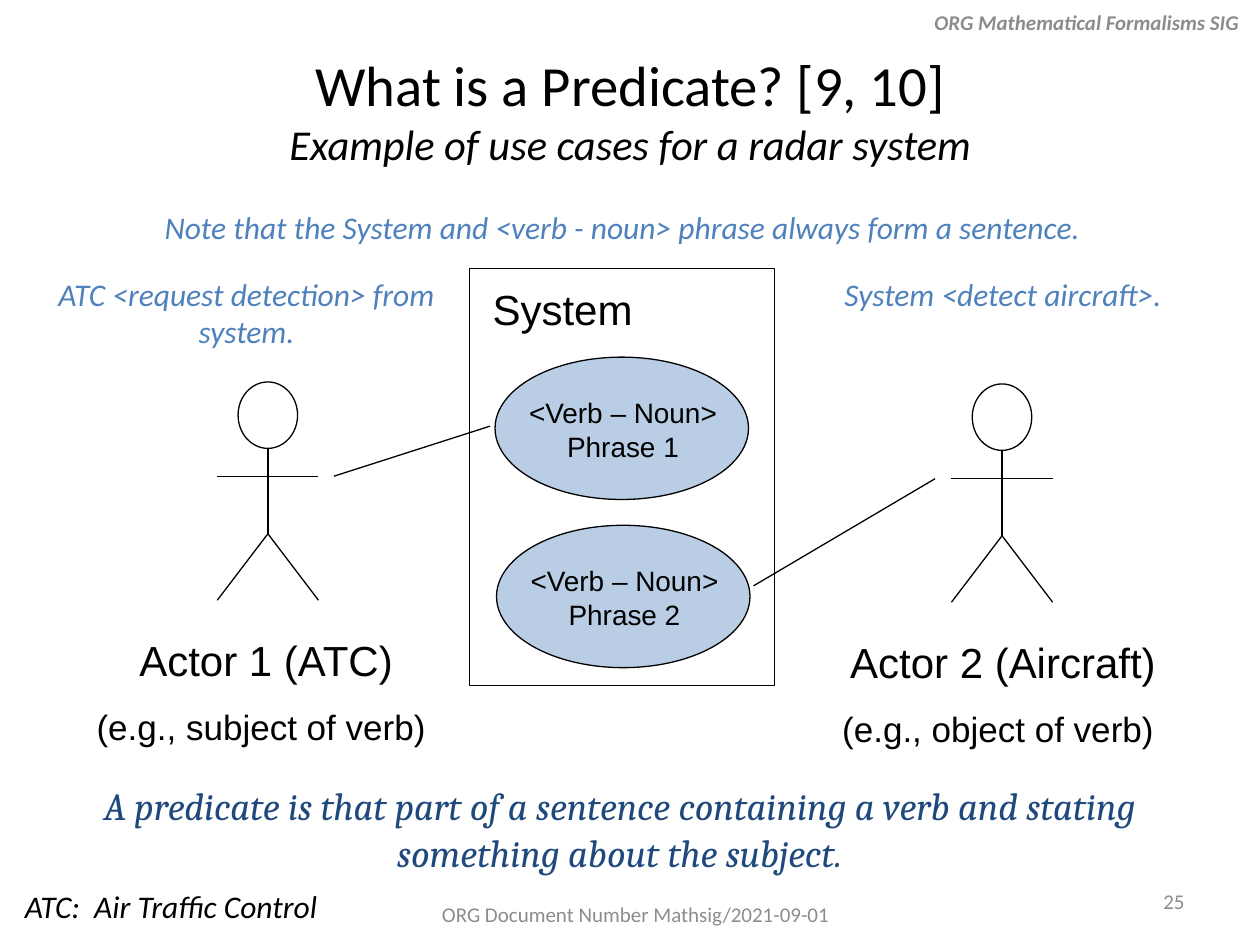
import pptx
import pptx.util
import pptx.dml.color
import pptx.enum.shapes
import pptx.enum.text
import pptx.oxml

Cm, Pt = pptx.util.Cm, pptx.util.Pt
SHAPE = pptx.enum.shapes.MSO_SHAPE
ALIGN = {"l": pptx.enum.text.PP_ALIGN.LEFT, "c": pptx.enum.text.PP_ALIGN.CENTER,
         "r": pptx.enum.text.PP_ALIGN.RIGHT}
TOP, MIDDLE = pptx.enum.text.MSO_ANCHOR.TOP, pptx.enum.text.MSO_ANCHOR.MIDDLE

BLACK, GREY, BLUE, NAVY, PALE = "000000", "8C8C8C", "4F81BD", "1F497D", "B9CDE5"

TITLE = ("What is a Predicate? [9, 10]", "Example of use cases for a radar system")
NOTES = [
    ((1.8, 4.06, 21.5, 1.02), "Note that the System and <verb - noun> phrase always form a sentence."),
    ((0.74, 5.41, 8.46, 1.8), "ATC <request detection> from system."),
    ((16.51, 5.41, 7.42, 1.02), "System <detect aircraft>."),
]
ACTORS = [
    {"center": 5.4, "top": 7.7, "label": (0.97, 12.67, 8.79, 2.57),
     "name": "Actor 1 (ATC)", "role": "(e.g., subject of verb) "},
    {"center": 20.2, "top": 7.74, "label": (16.31, 12.71, 7.82, 2.57),
     "name": "Actor 2 (Aircraft)", "role": "(e.g., object of verb) "},
]
USE_CASES = [(9.98, 7.2, "<Verb – Noun> Phrase 1"), (10.01, 10.59, "<Verb – Noun> Phrase 2")]
LINKS = [(6.73, 9.6, 9.88, 8.59), (15.19, 11.81, 18.85, 9.65)]
SYSTEM = (9.47, 5.41, 6.15, 8.41)
DEFINITION = "A predicate is that part of a sentence containing a verb and stating something about the subject."
FOOTERS = [
    ((18.21, 17.65, 5.92, 1.02), "25", "r", False),
    ((8.05, 17.91, 9.53, 1.02), "ORG Document Number Mathsig/2021-09-01", "c", False),
    ((18.24, 0.15, 6.99, 0.58), "ORG Mathematical Formalisms SIG", "r", True),
]

prs = pptx.Presentation()
prs.slide_width, prs.slide_height = Cm(25.4), Cm(19.05)
s = prs.slides.add_slide(prs.slide_layouts[6])


def rgb(value):
    return pptx.dml.color.RGBColor.from_string(value)


def add_run(p, text, size, font="Calibri", color=BLACK, italic=False, bold=False):
    r = p.add_run()
    r.text = text
    f = r.font
    f.size, f.name, f.italic, f.bold = Pt(size), font, italic, bold
    f.color.rgb = rgb(color)


def add_frame(box, align="c", anchor=TOP):
    tf = s.shapes.add_textbox(*map(Cm, box)).text_frame
    tf.word_wrap = True
    tf.vertical_anchor = anchor
    tf.paragraphs[0].alignment = ALIGN[align]
    return tf


def add_text(box, text, size, align="c", anchor=TOP, **style):
    tf = add_frame(box, align, anchor)
    add_run(tf.paragraphs[0], text, size, **style)
    return tf


def add_outline(kind, box, fill=None):
    sp = s.shapes.add_shape(kind, *map(Cm, box))
    sp.shadow.inherit = False
    if fill:
        sp.fill.solid()
        sp.fill.fore_color.rgb = rgb(fill)
    else:
        sp.fill.background()
    sp.line.color.rgb = rgb(BLACK)
    sp.line.width = Pt(0.75)


def add_line(x1, y1, x2, y2):
    cn = s.shapes.add_connector(pptx.enum.shapes.MSO_CONNECTOR.STRAIGHT,
                                Cm(x1), Cm(y1), Cm(x2), Cm(y2))
    cn.line.color.rgb = rgb(BLACK)
    cn.line.width = Pt(0.75)
    cn._element.spPr.append(pptx.oxml.parse_xml(
        '<a:effectLst xmlns:a="http://schemas.openxmlformats.org/drawingml/2006/main"/>'))


def add_actor(center, top, label, name, role):
    neck, arms, hips, feet = top + 1.34, top + 1.91, top + 3.06, top + 4.4
    left, right = center - 1.02, center + 1.02
    add_outline(SHAPE.OVAL, (center - 0.6, top, 1.2, 1.34))
    add_line(center, neck, center, hips)
    add_line(left, arms, right, arms)
    for foot in (left, right):
        add_line(center, hips, foot, feet)
    tf = add_text(label, name, 24, font="Arial")
    p = tf.add_paragraph()
    p.alignment = ALIGN["c"]
    p.space_before = Pt(11.5)
    add_run(p, role, 20, font="Arial")


p = add_frame((0.64, 0.84, 24.13, 2.74), anchor=MIDDLE).paragraphs[0]
add_run(p, TITLE[0], 32.4)
p.add_line_break()
add_run(p, TITLE[1], 24.3, italic=True)

for actor in ACTORS:
    add_actor(**actor)
for x, y, phrase in USE_CASES:
    add_outline(SHAPE.OVAL, (x, y, 5.11, 2.87), PALE)
    add_text((x + 0.33, y + 0.65, 4.5, 1.63), phrase, 16, font="Arial")
add_outline(SHAPE.RECTANGLE, SYSTEM)
add_text((9.68, 5.59, 4.09, 1.3), "System", 24, "l", font="Arial")
for link in LINKS:
    add_line(*link)

for box, text in NOTES:
    add_text(box, text, 18, color=BLUE, italic=True)
add_text((1.7, 15.65, 21.59, 2.13), DEFINITION, 22, font="Cambria", color=NAVY, italic=True)
add_text((0.25, 17.75, 9.73, 1.02), "ATC:  Air Traffic Control", 18, "l", italic=True)
for box, text, align, strong in FOOTERS:
    add_text(box, text, 12, align, MIDDLE, color=GREY, italic=strong, bold=strong)

prs.save("out.pptx")
